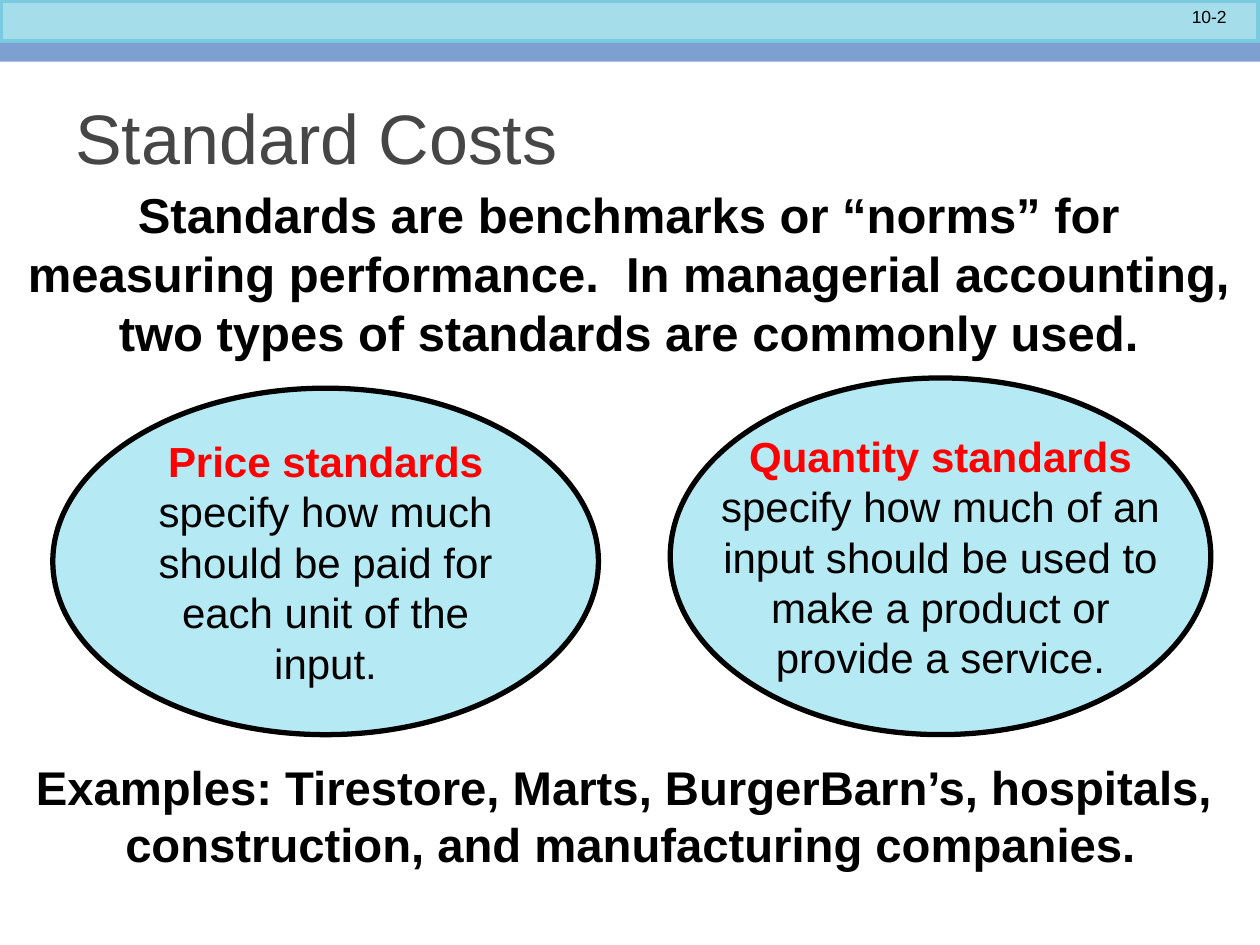
"""Build the Standard Costs slide with its two kinds of standards."""
from pptx import Presentation
from pptx.dml.color import RGBColor
from pptx.enum.shapes import MSO_SHAPE
from pptx.enum.text import MSO_ANCHOR, PP_ALIGN
from pptx.util import Pt

FONT = "Arial"
BLACK, RED, GRAY = "000000", "FF0000", "464646"
PALE_BLUE, BAR_BLUE, BAR_EDGE, BAND_BLUE = "B5E9F4", "A6DDEA", "7ACBE0", "7DA0D0"

BARS = [
    ((0, 0, 720, 24.5), BAR_BLUE, BAR_EDGE, 4),
    ((0, 28.8, 720, 6.5), BAND_BLUE, None, 0),
    ((0, 24.5, 720, 7.2), BAND_BLUE, None, 0),
]
TEXTS = [
    {"place": (612, 0, 96, 19.4), "size": 10, "align": PP_ALIGN.RIGHT,
     "paragraphs": [["10-2"]]},
    {"place": (36, 36, 648, 84.2), "size": 40, "color": GRAY,
     "align": PP_ALIGN.LEFT, "anchor": MSO_ANCHOR.MIDDLE,
     "paragraphs": [["Standard Costs"]]},
    {"place": (7.9, 102.2, 702.7, 108), "size": 28, "bold": True, "wrap": False,
     "paragraphs": [["Standards are benchmarks or “norms” for",
                     "measuring performance.  In managerial accounting,"],
                    ["two types of standards are commonly used."]]},
    {"place": (0, 429.8, 720.7, 72), "size": 27, "bold": True,
     "paragraphs": [["Examples: Tirestore, Marts, BurgerBarn’s, hospitals, "],
                    ["construction, and manufacturing companies."]]},
]
STANDARDS = [
    ((383, 216, 308.9, 203.8), "Quantity standards",
     ["specify how much of an", "input should be used to",
      "make a product or", "provide a service."]),
    ((30.2, 221.8, 311.8, 198), "Price standards",
     ["specify how much", "should be paid for", "each unit of the", "input."]),
]


def rgb(value):
    return RGBColor.from_string(value)


def add_span(para, text, size, color, bold):
    span = para.add_run()
    span.text = text
    span.font.name = FONT
    span.font.size = Pt(size)
    span.font.bold = bold
    span.font.color.rgb = rgb(color)


def add_lines(para, lines, size, color, bold):
    for index, line in enumerate(lines):
        if index:
            para.add_line_break()
        add_span(para, line, size, color, bold)


def add_shape(page, kind, place, fill, edge, width):
    shape = page.shapes.add_shape(kind, *map(Pt, place))
    shape.shadow.inherit = False
    shape.fill.solid()
    shape.fill.fore_color.rgb = rgb(fill)
    if edge:
        shape.line.color.rgb = rgb(edge)
        shape.line.width = Pt(width)
    else:
        shape.line.fill.background()
    return shape


def add_text(page, place, size, paragraphs, color=BLACK, bold=False, wrap=True,
             align=PP_ALIGN.CENTER, anchor=MSO_ANCHOR.TOP):
    frame = page.shapes.add_textbox(*map(Pt, place)).text_frame
    frame.word_wrap = wrap
    frame.vertical_anchor = anchor
    for index, lines in enumerate(paragraphs):
        para = frame.add_paragraph() if index else frame.paragraphs[0]
        para.alignment = align
        add_lines(para, lines, size, color, bold)


def add_standard(page, place, name, lines):
    oval = add_shape(page, MSO_SHAPE.OVAL, place, PALE_BLUE, BLACK, 3)
    frame = oval.text_frame
    frame.word_wrap = False
    frame.vertical_anchor = MSO_ANCHOR.MIDDLE
    para = frame.paragraphs[0]
    para.alignment = PP_ALIGN.CENTER
    add_span(para, name, 24, RED, True)
    para.add_line_break()
    add_lines(para, lines, 24, BLACK, False)


def main():
    deck = Presentation()
    deck.slide_width, deck.slide_height = Pt(720), Pt(540)
    page = deck.slides.add_slide(deck.slide_layouts[6])
    for bar in BARS:
        add_shape(page, MSO_SHAPE.RECTANGLE, *bar)
    for text in TEXTS:
        add_text(page, **text)
    for standard in STANDARDS:
        add_standard(page, *standard)
    deck.save("out.pptx")


if __name__ == "__main__":
    main()
